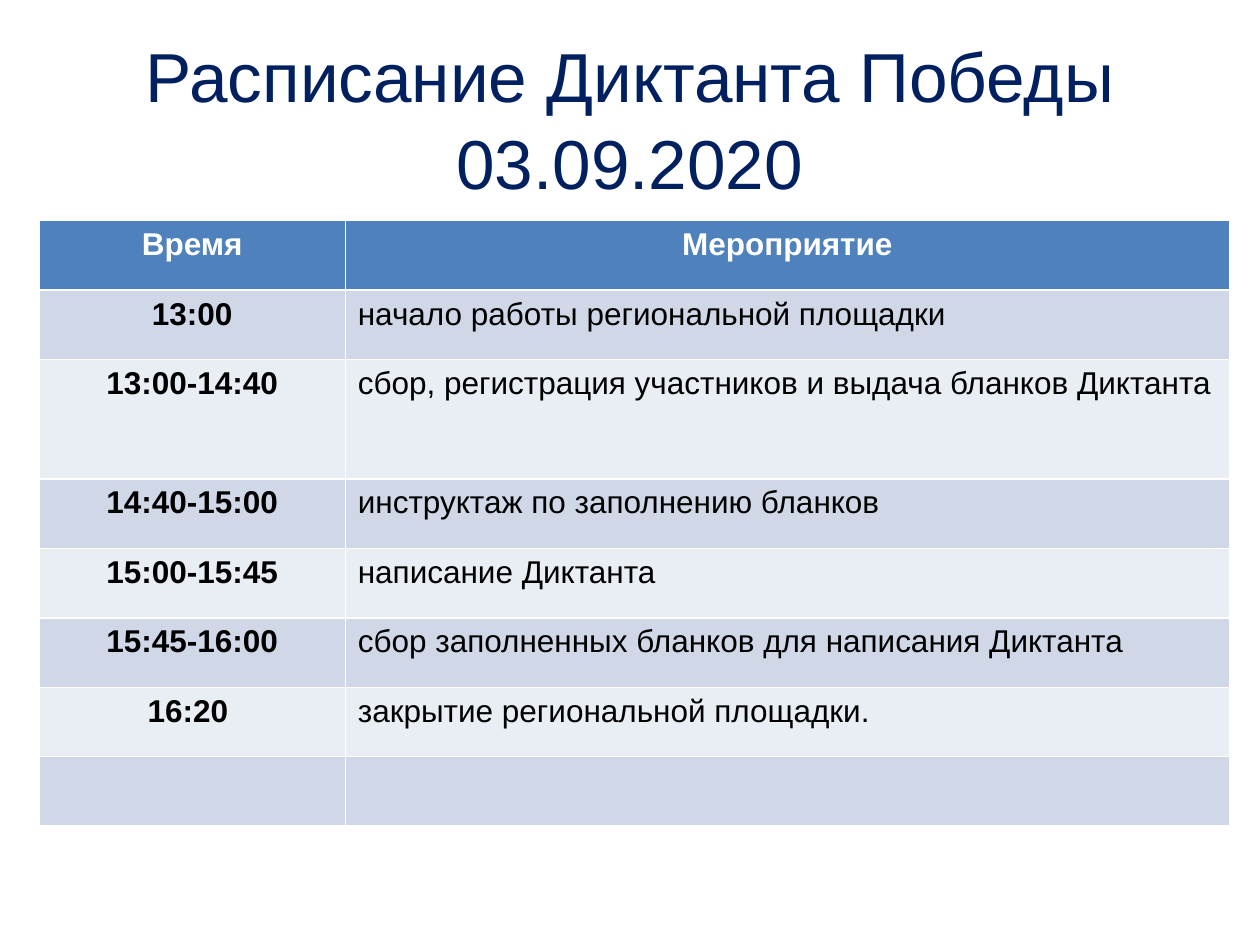
from pptx import Presentation
from pptx.dml.color import RGBColor
from pptx.enum.text import MSO_ANCHOR, PP_ALIGN
from pptx.util import Cm, Pt

TITLE = "Расписание Диктанта Победы\v03.09.2020"
ROWS = [
    ("Время", "Мероприятие"),
    ("13:00", "начало работы региональной площадки"),
    ("13:00-14:40", "сбор, регистрация участников и выдача бланков Диктанта"),
    ("14:40-15:00", "инструктаж по заполнению бланков"),
    ("15:00-15:45", "написание Диктанта"),
    ("15:45-16:00", "сбор заполненных бланков для написания Диктанта"),
    ("16:20 ", "закрытие региональной площадки."),
    ("", ""),
]
COL_WIDTHS = (6.17, 17.83)
ROW_HEIGHT, TALL_ROW_HEIGHT, TALL_ROW = 1.4, 2.41, 2
HEADER_FILL, BAND_FILLS = "4F81BD", ("E9EDF4", "D0D8E8")


def rgb(value):
    return RGBColor.from_string(value)


def format_text(p, size, color, bold=False, align=PP_ALIGN.LEFT):
    p.alignment = align
    for font in [p.font] + [r.font for r in p.runs]:
        font.name = "Arial"
        font.size = Pt(size)
        font.bold = bold
        font.color.rgb = rgb(color)


def add_title(slide):
    box = slide.shapes.add_textbox(Cm(1.27), Cm(0.76), Cm(22.86), Cm(3.18))
    tf = box.text_frame
    tf.word_wrap = True
    tf.vertical_anchor = MSO_ANCHOR.MIDDLE
    p = tf.paragraphs[0]
    p.text = TITLE
    p.line_spacing = 1.04
    format_text(p, 39.6, "002060", align=PP_ALIGN.CENTER)


def add_schedule(slide):
    heights = [TALL_ROW_HEIGHT if i == TALL_ROW else ROW_HEIGHT
               for i in range(len(ROWS))]
    table = slide.shapes.add_table(
        len(ROWS), len(COL_WIDTHS), Cm(0.79), Cm(4.45),
        Cm(sum(COL_WIDTHS)), Cm(sum(heights))).table
    for column, width in zip(table.columns, COL_WIDTHS):
        column.width = Cm(width)
    for i, (texts, height) in enumerate(zip(ROWS, heights)):
        table.rows[i].height = Cm(height)
        header = i == 0
        for j, text in enumerate(texts):
            cell = table.cell(i, j)
            cell.fill.solid()
            cell.fill.fore_color.rgb = rgb(HEADER_FILL if header else BAND_FILLS[i % 2])
            p = cell.text_frame.paragraphs[0]
            p.text = text
            strong = header or j == 0
            format_text(p, 18, "FFFFFF" if header else "000000", strong,
                        PP_ALIGN.CENTER if strong else PP_ALIGN.LEFT)


def main():
    prs = Presentation()
    prs.slide_width, prs.slide_height = Cm(25.4), Cm(19.05)
    slide = prs.slides.add_slide(prs.slide_layouts[6])
    add_title(slide)
    add_schedule(slide)
    prs.save("out.pptx")


if __name__ == "__main__":
    main()
